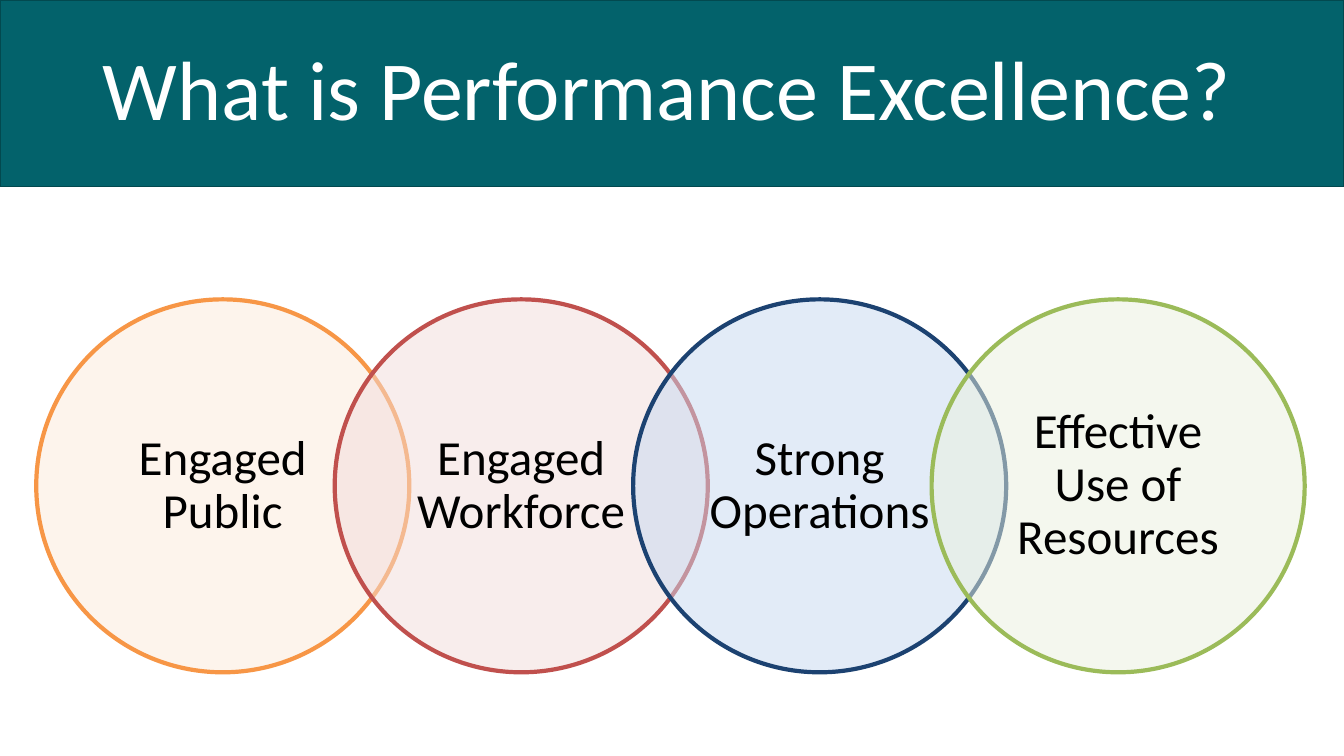
from dataclasses import dataclass

from lxml import etree
from pptx import Presentation
from pptx import util as u
from pptx.dml.color import RGBColor
from pptx.enum import shapes, text
from pptx.oxml.ns import qn
from pptx.shapes.autoshape import Shape
from pptx.slide import Slide

COLORS = {
    "band": "03626B", "band_edge": "02494F",
    "title": "FFFFFF", "label": "000000",
    "orange": "F79646", "pale_orange": "FDEADA",
    "red": "C0504D", "pale_red": "F2DCDB",
    "navy": "1C4271", "pale_blue": "C6D9F1",
    "green": "9BBB59", "pale_green": "EBF1DE",
}
DIAMETER = 3.7
STEP = 2.96
FIRST_LEFT, CIRCLE_TOP = 0.36, 2.97
FRAME_FORMAT = {
    "word_wrap": True,
    "auto_size": text.MSO_AUTO_SIZE.NONE,
    "vertical_anchor": text.MSO_ANCHOR.MIDDLE,
    "margin_top": u.Inches(0.05),
    "margin_bottom": u.Inches(0.05),
}


@dataclass(frozen=True)
class Quality:
    label: str
    fill: str
    outline: str


QUALITIES = [
    Quality("Engaged Public", "pale_orange", "orange"),
    Quality("Engaged Workforce", "pale_red", "red"),
    Quality("Strong Operations", "pale_blue", "navy"),
    Quality("Effective Use of Resources", "pale_green", "green"),
]


def color(name: str) -> RGBColor:
    return RGBColor.from_string(COLORS[name])


def paint(shape: Shape, fill: str, outline: str, width: float) -> None:
    shape.shadow.inherit = False
    shape.fill.solid()
    shape.fill.fore_color.rgb = color(fill)
    shape.line.color.rgb = color(outline)
    shape.line.width = u.Pt(width)


def make_half_transparent(shape: Shape) -> None:
    fill_color = shape._element.spPr.find(f"{qn('a:solidFill')}/{qn('a:srgbClr')}")
    etree.SubElement(fill_color, qn("a:alpha"), val="50000")


def write(shape: Shape, words: str, size: float, ink: str,
          align: text.PP_ALIGN, side_margin: float) -> None:
    frame = shape.text_frame
    frame.text = words
    margins = {"margin_left": u.Inches(side_margin), "margin_right": u.Inches(side_margin)}
    for name, value in {**FRAME_FORMAT, **margins}.items():
        setattr(frame, name, value)
    paragraph = frame.paragraphs[0]
    paragraph.alignment = align
    paragraph.line_spacing = 0.9
    font = paragraph.runs[0].font
    for name, value in {"name": "Calibri", "size": u.Pt(size)}.items():
        setattr(font, name, value)
    font.color.rgb = color(ink)


def add_heading(slide: Slide, words: str) -> None:
    """Place the title on a full-width band that lies behind it."""
    title = slide.shapes.title
    box = {"left": 0.92, "top": 0.2, "width": 11.5, "height": 1.45}
    for name, value in box.items():
        setattr(title, name, u.Inches(value))
    write(title, words, 60, "title", text.PP_ALIGN.LEFT, 0.1)
    band = slide.shapes.add_shape(
        shapes.MSO_SHAPE.RECTANGLE, 0, 0, u.Inches(13.33), u.Inches(1.85))
    paint(band, "band", "band_edge", 1)
    title._element.addprevious(band._element)


def add_circle(slide: Slide, quality: Quality, position: int) -> None:
    circle = slide.shapes.add_shape(
        shapes.MSO_SHAPE.OVAL,
        u.Inches(FIRST_LEFT + position * STEP), u.Inches(CIRCLE_TOP),
        u.Inches(DIAMETER), u.Inches(DIAMETER))
    paint(circle, quality.fill, quality.outline, 3)
    make_half_transparent(circle)
    write(circle, quality.label, 35, "label", text.PP_ALIGN.CENTER, 0.2)


def main() -> None:
    deck = Presentation()
    deck.slide_width, deck.slide_height = u.Inches(13.33), u.Inches(7.5)
    slide = deck.slides.add_slide(deck.slide_layouts.get_by_name("Title Only"))
    add_heading(slide, "What is Performance Excellence?")
    for position, quality in enumerate(QUALITIES):
        add_circle(slide, quality, position)
    deck.save("out.pptx")


if __name__ == "__main__":
    main()
